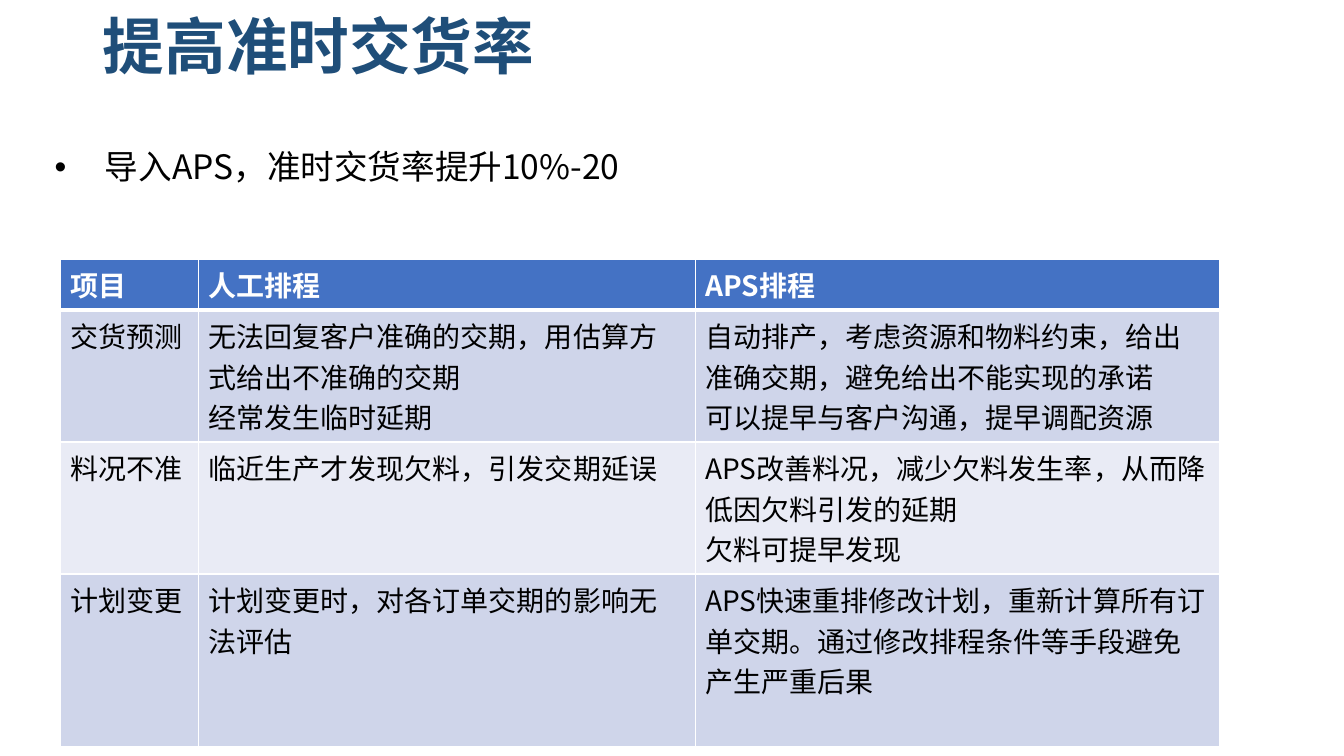
from lxml.etree import SubElement
from pptx import Presentation
from pptx.dml.color import RGBColor
from pptx.enum.text import MSO_ANCHOR as Anchor, MSO_AUTO_SIZE as AutoSize, PP_ALIGN as Align
from pptx.oxml.ns import qn
from pptx.util import Cm, Pt

COLUMN_WIDTHS = [3.48, 12.52, 13.21]
ROW_HEIGHTS = [1.09, 2.79, 2.79, 4.35]
ROWS = [
    ["项目", "人工排程", "APS排程"],
    ["交货预测",
     "无法回复客户准确的交期，用估算方式给出不准确的交期\n经常发生临时延期",
     "自动排产，考虑资源和物料约束，给出准确交期，避免给出不能实现的承诺\n可以提早与客户沟通，提早调配资源"],
    ["料况不准",
     "临近生产才发现欠料，引发交期延误",
     "APS改善料况，减少欠料发生率，从而降低因欠料引发的延期\n欠料可提早发现"],
    ["计划变更",
     "计划变更时，对各订单交期的影响无法评估",
     "APS快速重排修改计划，重新计算所有订单交期。通过修改排程条件等手段避免产生严重后果"],
]


def color(value):
    return RGBColor.from_string(value)


class Slide:
    typeface = "Noto Sans CJK SC"
    title_color, text_color, white = "1F4E79", "000000", "FFFFFF"
    header_fill, band_fills = "4472C4", ["CFD5EA", "E9EBF5"]

    def __init__(self, deck):
        self.page = deck.slides.add_slide(deck.slide_layouts[1])

    def style(self, paragraph, size, tint, bold=False):
        font = paragraph.font
        font.name, font.size, font.bold = self.typeface, Pt(size), bold
        font.color.rgb = color(tint)
        defaults = paragraph._p.pPr.find(qn("a:defRPr"))
        SubElement(defaults, qn("a:ea"), typeface=self.typeface)

    def place(self, box, left, top, width, height):
        box.left, box.top, box.width, box.height = Cm(left), Cm(top), Cm(width), Cm(height)
        box.text_frame.word_wrap = True
        box.text_frame.auto_size = AutoSize.NONE

    def title(self, text, *bounds):
        box = self.page.shapes.title
        self.place(box, *bounds)
        box.text_frame.vertical_anchor = Anchor.MIDDLE
        box.text_frame.text = text
        para = box.text_frame.paragraphs[0]
        para.alignment = Align.LEFT
        para.line_spacing = 0.9
        self.style(para, 44, self.title_color, True)

    def bullets(self, text, *bounds):
        box = self.page.placeholders[1]
        self.place(box, *bounds)
        box.text_frame.text = text
        for para in box.text_frame.paragraphs:
            para.space_before = Pt(0)
            properties = para._p.get_or_add_pPr()
            properties.set("marL", str(Cm(1.27)))
            properties.set("indent", str(-Cm(1.27)))
            SubElement(properties, qn("a:buFont"), typeface="Arial")
            SubElement(properties, qn("a:buChar"), char="•")
            self.style(para, 24, self.text_color)

    def borders(self, cell, header):
        properties = cell._tc.get_or_add_tcPr()
        for side in "LRTB":
            width = 3 if header and side == "B" else 1
            line = SubElement(properties, qn(f"a:ln{side}"), w=str(Pt(width)))
            fill = SubElement(line, qn("a:solidFill"))
            SubElement(fill, qn("a:srgbClr"), val=self.white)

    def table(self, rows, left, top, widths, heights):
        frame = self.page.shapes.add_table(
            len(rows), len(widths), Cm(left), Cm(top), Cm(sum(widths)), Cm(sum(heights)))
        grid = frame.table
        for column, width in zip(grid.columns, widths):
            column.width = Cm(width)
        for index, (row, height, texts) in enumerate(zip(grid.rows, heights, rows)):
            row.height = Cm(height)
            header = index == 0
            shade = self.header_fill if header else self.band_fills[(index - 1) % 2]
            for cell, text in zip(row.cells, texts):
                self.borders(cell, header)
                cell.fill.solid()
                cell.fill.fore_color.rgb = color(shade)
                cell.text_frame.text = text
                for para in cell.text_frame.paragraphs:
                    self.style(para, 20, self.white if header else self.text_color, header)


def main():
    deck = Presentation()
    deck.slide_width, deck.slide_height = Cm(33.87), Cm(19.05)
    slide = Slide(deck)

    # Heading and key message
    slide.title("提高准时交货率", 2.34, 0.38, 29.21, 1.73)
    slide.bullets("导入APS，准时交货率提升10%-20", 1.12, 3.56, 29.62, 1.47)

    # Comparison of manual and APS scheduling
    slide.table(ROWS, 1.52, 6.53, COLUMN_WIDTHS, ROW_HEIGHTS)

    deck.save("out.pptx")


if __name__ == "__main__":
    main()
